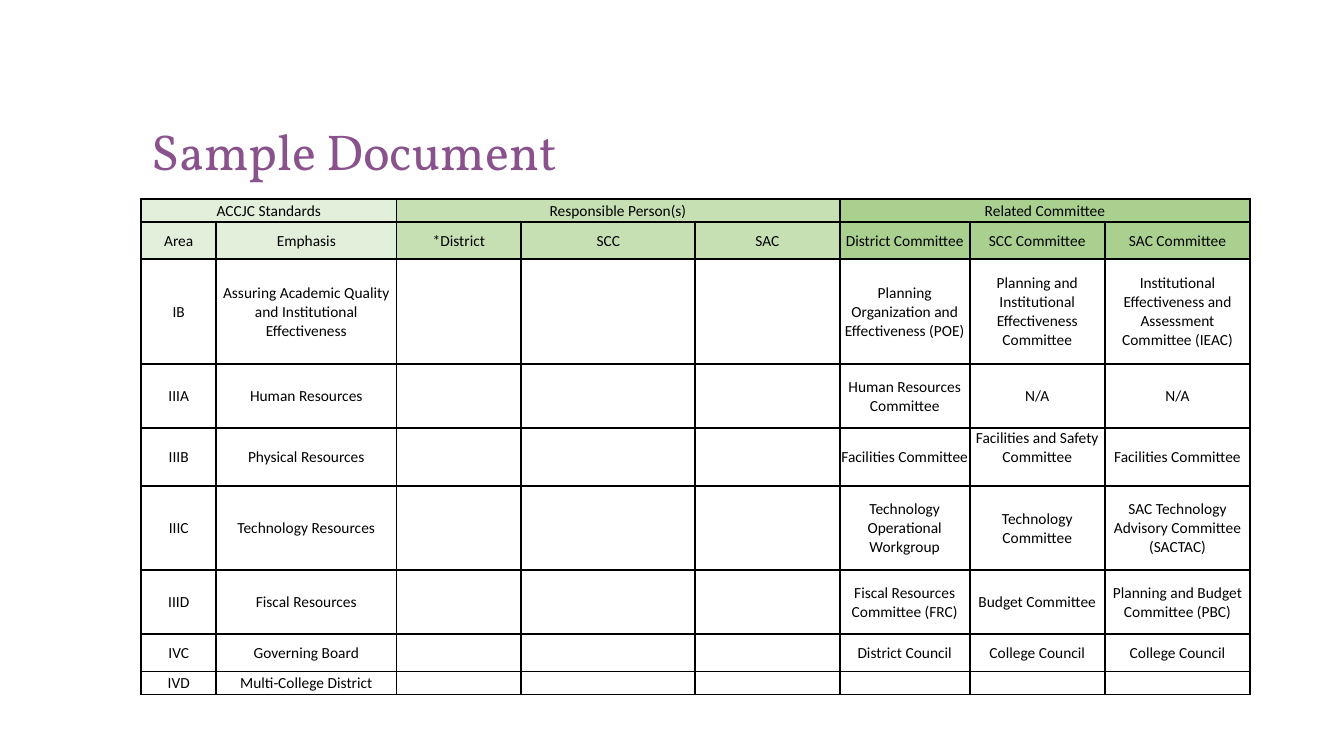
from lxml.etree import SubElement
from pptx import Presentation
from pptx.dml.color import RGBColor
from pptx.enum.text import MSO_ANCHOR, PP_ALIGN
from pptx.oxml.ns import qn
from pptx.util import Cm, Pt

HUES = {"title": "8A528C", "ink": "000000", "pale": "E2EFDA", "mid": "C6E0B4", "deep": "A9D08E"}
COLS = [1.89, 4.54, 3.15, 4.38, 3.64, 3.28, 3.4, 3.67]
ROWS = [0.58, 0.94, 2.64, 1.61, 1.46, 2.13, 1.61, 0.94, 0.58]
BANDS = [("pale", 0, 1), ("mid", 2, 4), ("deep", 5, 7)]
GAP = [""] * 3
DATA = [
    ["ACCJC Standards", "", "Responsible Person(s)", "", "", "Related Committee", "", ""],
    ["Area", "Emphasis", "*District", "SCC", "SAC",
     "District Committee", "SCC Committee", "SAC Committee"],
    ["IB", "Assuring Academic Quality and Institutional Effectiveness", *GAP,
     "Planning Organization and Effectiveness (POE)",
     "Planning and Institutional Effectiveness Committee",
     "Institutional Effectiveness and Assessment Committee (IEAC)"],
    ["IIIA", "Human Resources", *GAP, "Human Resources Committee", "N/A", "N/A"],
    ["IIIB", "Physical Resources", *GAP, "Facilities Committee",
     "Facilities and Safety Committee", "Facilities Committee"],
    ["IIIC", "Technology Resources", *GAP, "Technology Operational Workgroup",
     "Technology Committee", "SAC Technology Advisory Committee (SACTAC)"],
    ["IIID", "Fiscal Resources", *GAP, "Fiscal Resources Committee (FRC)",
     "Budget Committee", "Planning and Budget Committee (PBC)"],
    ["IVC", "Governing Board", *GAP, "District Council", "College Council", "College Council"],
    ["IVD", "Multi-College District", *GAP, *GAP],
]
CELL = {"margin_left": Cm(0.02), "margin_right": Cm(0.02), "margin_top": Cm(0.02),
        "margin_bottom": 0, "vertical_anchor": MSO_ANCHOR.MIDDLE}


def style(item, form):
    """Set each format value on an item."""
    for key, val in form.items():
        setattr(item, key, val)


def hue(name):
    """Return a named colour."""
    return RGBColor.from_string(HUES[name])


def edge(cell):
    """Draw the four borders of a cell."""
    props = cell._tc.get_or_add_tcPr()
    for side in "LRTB":
        line = SubElement(props, qn(f"a:ln{side}"), w=str(Pt(1.5)))
        fill = SubElement(line, qn("a:solidFill"))
        SubElement(fill, qn("a:srgbClr"), val=HUES["ink"])


def write(cell, text):
    """Write centred text in a cell."""
    style(cell, CELL)
    para = cell.text_frame.paragraphs[0]
    para.alignment = PP_ALIGN.CENTER
    if text:
        run = para.add_run()
        run.text = text
        style(run.font, {"size": Pt(11), "name": "Calibri", "bold": False})
        run.font.color.rgb = hue("ink")
    else:
        SubElement(para._p, qn("a:endParaRPr"), sz="1100")


def head(slide, box):
    """Place the title in its box."""
    shape = slide.shapes.title
    style(shape, dict(zip(("left", "top", "width", "height"), box)))
    frame = shape.text_frame
    frame.text = "Sample Document"
    style(frame, {"vertical_anchor": MSO_ANCHOR.BOTTOM, "word_wrap": True})
    para = frame.paragraphs[0]
    style(para, {"alignment": PP_ALIGN.LEFT, "line_spacing": 0.9})
    font = para.runs[0].font
    style(font, {"size": Pt(36), "name": "Vollkorn"})
    font.color.rgb = hue("title")


def grid(slide, box):
    """Build the table of standards and committees in its box."""
    table = slide.shapes.add_table(len(ROWS), len(COLS), *box).table
    style(table, {"first_row": False, "horz_banding": False})
    for col, size in zip(table.columns, COLS):
        col.width = Cm(size)
    for row, size in zip(table.rows, ROWS):
        row.height = Cm(size)
    for r, line in enumerate(DATA):
        for c, text in enumerate(line):
            cell = table.cell(r, c)
            edge(cell)
            cell.fill.background()
            write(cell, text)
    for name, first, last in BANDS:
        for r in range(2):
            for c in range(first, last + 1):
                fill = table.cell(r, c).fill
                fill.solid()
                fill.fore_color.rgb = hue(name)
        table.cell(0, first).merge(table.cell(0, last))
    table.cell(4, 6).vertical_anchor = MSO_ANCHOR.TOP


def main():
    """Build and save the slide."""
    deck = Presentation()
    style(deck, {"slide_width": Cm(33.87), "slide_height": Cm(19.05)})
    slide = deck.slides.add_slide(deck.slide_layouts[5])
    left, top = Cm(3.56), Cm(5.01)
    head(slide, (left, Cm(1.02), Cm(27.91), Cm(3.68)))
    grid(slide, (left, top, Cm(sum(COLS)), Cm(sum(ROWS))))
    deck.save("out.pptx")


if __name__ == "__main__":
    main()
